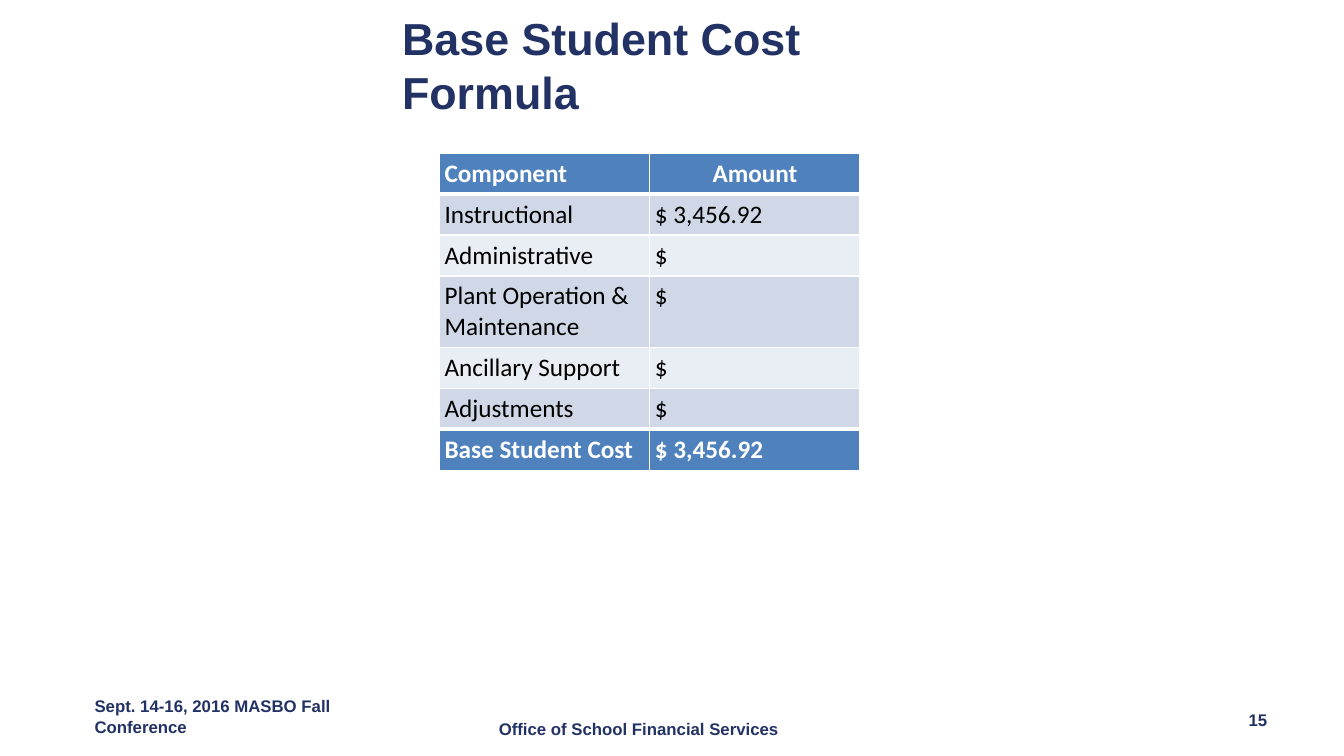
import pptx
import pptx.dml.color
import pptx.enum.text
import pptx.oxml
import pptx.oxml.ns
import pptx.util

Pt = pptx.util.Pt
RGBColor = pptx.dml.color.RGBColor
Align = pptx.enum.text.PP_ALIGN
Anchor = pptx.enum.text.MSO_ANCHOR

NAVY = RGBColor(0x22, 0x32, 0x64)
BLUE = RGBColor(0x4F, 0x81, 0xBD)
BANDS = (RGBColor(0xD0, 0xD8, 0xE8), RGBColor(0xE9, 0xED, 0xF4))
WHITE = RGBColor(0xFF, 0xFF, 0xFF)
BLACK = RGBColor(0, 0, 0)

COST_ROWS = [
    ("Component", "Amount"),
    ("Instructional", "$ 3,456.92"),
    ("Administrative", "$"),
    ("Plant Operation & Maintenance", "$"),
    ("Ancillary Support", "$"),
    ("Adjustments", "$"),
    ("Base Student Cost", "$ 3,456.92"),
]


class SlideBuilder:
    heading_font = "Arial"
    table_font = "Calibri"
    cell_margin = Pt(3.6)

    def __init__(self, slide):
        self.slide = slide

    def add_run(self, paragraph, text, size, font, color, bold=True):
        run = paragraph.add_run()
        run.text = text
        run.font.size = Pt(size)
        run.font.name = font
        run.font.bold = bold
        run.font.color.rgb = color

    def title(self, text, left, top, width, height):
        heading = self.slide.shapes.title
        heading.left, heading.top = Pt(left), Pt(top)
        heading.width, heading.height = Pt(width), Pt(height)
        frame = heading.text_frame
        frame.word_wrap = True
        frame.auto_size = pptx.enum.text.MSO_AUTO_SIZE.NONE
        frame.vertical_anchor = Anchor.TOP
        paragraph = frame.paragraphs[0]
        paragraph.alignment = Align.LEFT
        self.add_run(paragraph, text, 32, self.heading_font, NAVY)

    def footer(self, text, left, top, align=Align.LEFT):
        box = self.slide.shapes.add_textbox(Pt(left), Pt(top), Pt(224), Pt(39.6))
        frame = box.text_frame
        frame.word_wrap = True
        frame.vertical_anchor = Anchor.MIDDLE
        paragraph = frame.paragraphs[0]
        paragraph.alignment = align
        self.add_run(paragraph, text, 12, self.heading_font, NAVY)

    def cell_borders(self, cell, top, bottom):
        """Draw white borders, one point wide at the sides."""
        properties = cell._tc.get_or_add_tcPr()
        widths = {"lnL": 1, "lnR": 1, "lnT": top, "lnB": bottom}
        for position, (side, width) in enumerate(widths.items()):
            properties.insert(position, pptx.oxml.parse_xml(
                f'<a:{side} {pptx.oxml.ns.nsdecls("a")} w="{Pt(width)}">'
                f'<a:solidFill><a:srgbClr val="{WHITE}"/></a:solidFill></a:{side}>'))

    def table(self, rows, left, top, column_width, row_height):
        """Add a table whose first and last rows are emphasised."""
        columns = len(rows[0])
        frame = self.slide.shapes.add_table(
            len(rows), columns, Pt(left), Pt(top),
            Pt(column_width * columns), Pt(row_height * len(rows)))
        grid = frame.table
        for column in grid.columns:
            column.width = Pt(column_width)
        last = len(rows) - 1
        for i, row in enumerate(rows):
            grid.rows[i].height = Pt(row_height)
            strong = i in (0, last)
            for j, text in enumerate(row):
                cell = grid.cell(i, j)
                cell.margin_left = cell.margin_right = self.cell_margin
                cell.margin_top = cell.margin_bottom = self.cell_margin
                cell.fill.solid()
                cell.fill.fore_color.rgb = BLUE if strong else BANDS[(i - 1) % 2]
                self.cell_borders(cell, 3 if i in (1, last) else 1,
                                  3 if i in (0, last - 1) else 1)
                paragraph = cell.text_frame.paragraphs[0]
                if i == 0 and j == 1:
                    paragraph.alignment = Align.CENTER
                self.add_run(paragraph, text, 18, self.table_font,
                             WHITE if strong else BLACK, strong)


def main():
    deck = pptx.Presentation()
    deck.slide_width, deck.slide_height = Pt(960), Pt(540)
    builder = SlideBuilder(deck.slides.add_slide(deck.slide_layouts[5]))
    builder.table(COST_ROWS, 314, 109.5, 150.2, 29.2)
    builder.title("Base Student Cost Formula", 280, 4.3, 424, 84.2)
    builder.footer("Office of School Financial Services", 349.2, 500.4)
    builder.footer("Sept. 14-16, 2016 MASBO Fall Conference", 60.5, 491.8)
    builder.footer("15", 688.3, 494.6, Align.RIGHT)
    deck.save("out.pptx")


if __name__ == "__main__":
    main()
